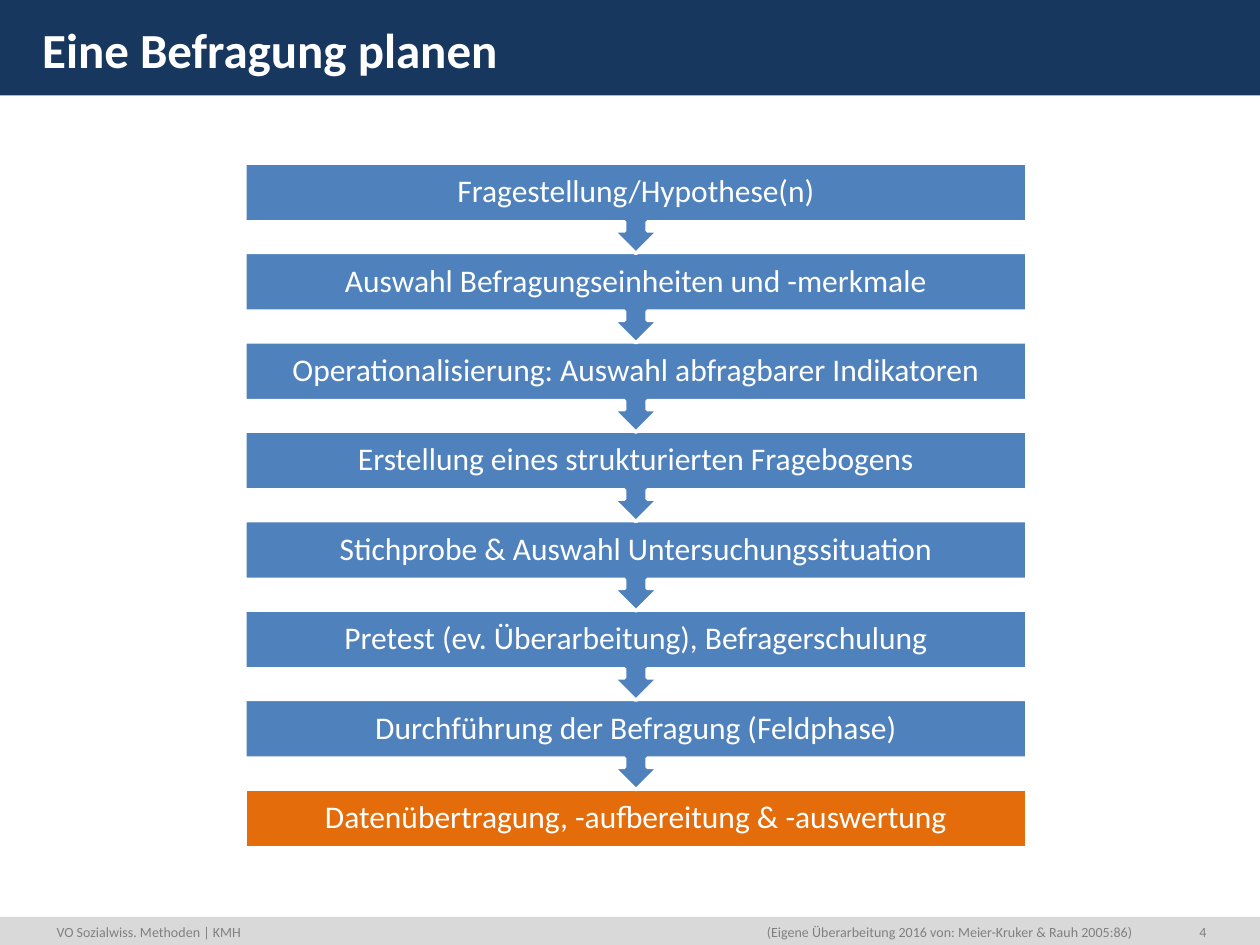
import pptx
import pptx.util
import pptx.dml.color
import pptx.enum.shapes
import pptx.enum.text
from dataclasses import dataclass

Pt = pptx.util.Pt
Shape = pptx.enum.shapes.MSO_SHAPE
Align = pptx.enum.text.PP_ALIGN
Anchor = pptx.enum.text.MSO_ANCHOR

TITLE = "Eine Befragung planen"
COURSE = "VO Sozialwiss. Methoden | KMH"
CITATION = "(Eigene Überarbeitung 2016 von: Meier-Kruker & Rauh 2005:86)"
PAGE_NUMBER = "4"
STEPS = [
    "Fragestellung/Hypothese(n)",
    "Auswahl Befragungseinheiten und -merkmale",
    "Operationalisierung: Auswahl abfragbarer Indikatoren",
    "Erstellung eines strukturierten Fragebogens",
    "Stichprobe & Auswahl Untersuchungssituation",
    "Pretest (ev. Überarbeitung), Befragerschulung",
    "Durchführung der Befragung (Feldphase)",
    "Datenübertragung, -aufbereitung & -auswertung",
]


@dataclass(frozen=True)
class Theme:
    font: str = "Calibri"
    header: str = "17375E"
    footer: str = "D9D9D9"
    step: str = "4F81BD"
    last_step: str = "E46C0A"
    white: str = "FFFFFF"
    muted: str = "808080"
    title_size: int = 28
    step_size: int = 18
    footer_size: int = 8


THEME = Theme()
PAGE_WIDTH, PAGE_HEIGHT = 720, 540
HEADER_HEIGHT = 54.6
FOOTER_TOP = 524
FLOW_LEFT, FLOW_TOP, FLOW_WIDTH = 140, 93.2, 446.8
STEP_PITCH, CALLOUT_HEIGHT, LAST_HEIGHT = 51.08, 51.7, 33.6


def rgb(value):
    return pptx.dml.color.RGBColor.from_string(value)


def write(box, text, size, color, bold=False, align=Align.LEFT,
          anchor=Anchor.TOP, line_spacing=None, inset=None):
    frame = box.text_frame
    frame.word_wrap = True
    frame.vertical_anchor = anchor
    if inset is not None:
        frame.margin_left = frame.margin_right = Pt(inset)
        frame.margin_top = frame.margin_bottom = Pt(inset)
    para = frame.paragraphs[0]
    para.alignment = align
    para.line_spacing = line_spacing
    span = para.add_run()
    span.text = text
    span.font.name = THEME.font
    span.font.size = Pt(size)
    span.font.bold = bold
    span.font.color.rgb = rgb(color)


def add_block(page, kind, left, top, width, height, fill, outline=None):
    shape = page.shapes.add_shape(kind, Pt(left), Pt(top), Pt(width), Pt(height))
    shape.shadow.inherit = False
    shape.fill.solid()
    shape.fill.fore_color.rgb = rgb(fill)
    if outline:
        shape.line.color.rgb = rgb(outline)
        shape.line.width = Pt(2)
    else:
        shape.line.fill.background()
    return shape


def add_label(page, text, left, top, width, height, **style):
    box = page.shapes.add_textbox(Pt(left), Pt(top), Pt(width), Pt(height))
    write(box, text, **style)


def add_flow(page):
    """Stack the steps from the bottom up, so each arrow lies over the next box."""
    last = len(STEPS) - 1
    for index in range(last, -1, -1):
        if index == last:
            kind, height, fill = Shape.RECTANGLE, LAST_HEIGHT, THEME.last_step
        else:
            kind, height, fill = Shape.DOWN_ARROW_CALLOUT, CALLOUT_HEIGHT, THEME.step
        box = add_block(page, kind, FLOW_LEFT, FLOW_TOP + index * STEP_PITCH,
                        FLOW_WIDTH, height, fill, outline=THEME.white)
        write(box, STEPS[index], THEME.step_size, THEME.white, align=Align.CENTER,
              anchor=Anchor.MIDDLE, line_spacing=0.9, inset=10)


def main():
    deck = pptx.Presentation()
    deck.slide_width, deck.slide_height = Pt(PAGE_WIDTH), Pt(PAGE_HEIGHT)
    page = deck.slides.add_slide(deck.slide_layouts[6])

    add_block(page, Shape.RECTANGLE, 0, FOOTER_TOP, PAGE_WIDTH,
              PAGE_HEIGHT - FOOTER_TOP, THEME.footer)
    add_block(page, Shape.RECTANGLE, 0, 0, PAGE_WIDTH, HEADER_HEIGHT, THEME.header)
    add_label(page, TITLE, 17, 7.5, 680, 36, size=THEME.title_size,
              color=THEME.white, bold=True)
    for text, left, width, align in (
        (COURSE, 25.2, 215, Align.LEFT),
        (CITATION, 348.5, 306, Align.RIGHT),
        (PAGE_NUMBER, 666, 30.5, Align.RIGHT),
    ):
        add_label(page, text, left, FOOTER_TOP, width, 17, size=THEME.footer_size,
                  color=THEME.muted, align=align)
    add_flow(page)
    deck.save("out.pptx")


if __name__ == "__main__":
    main()
